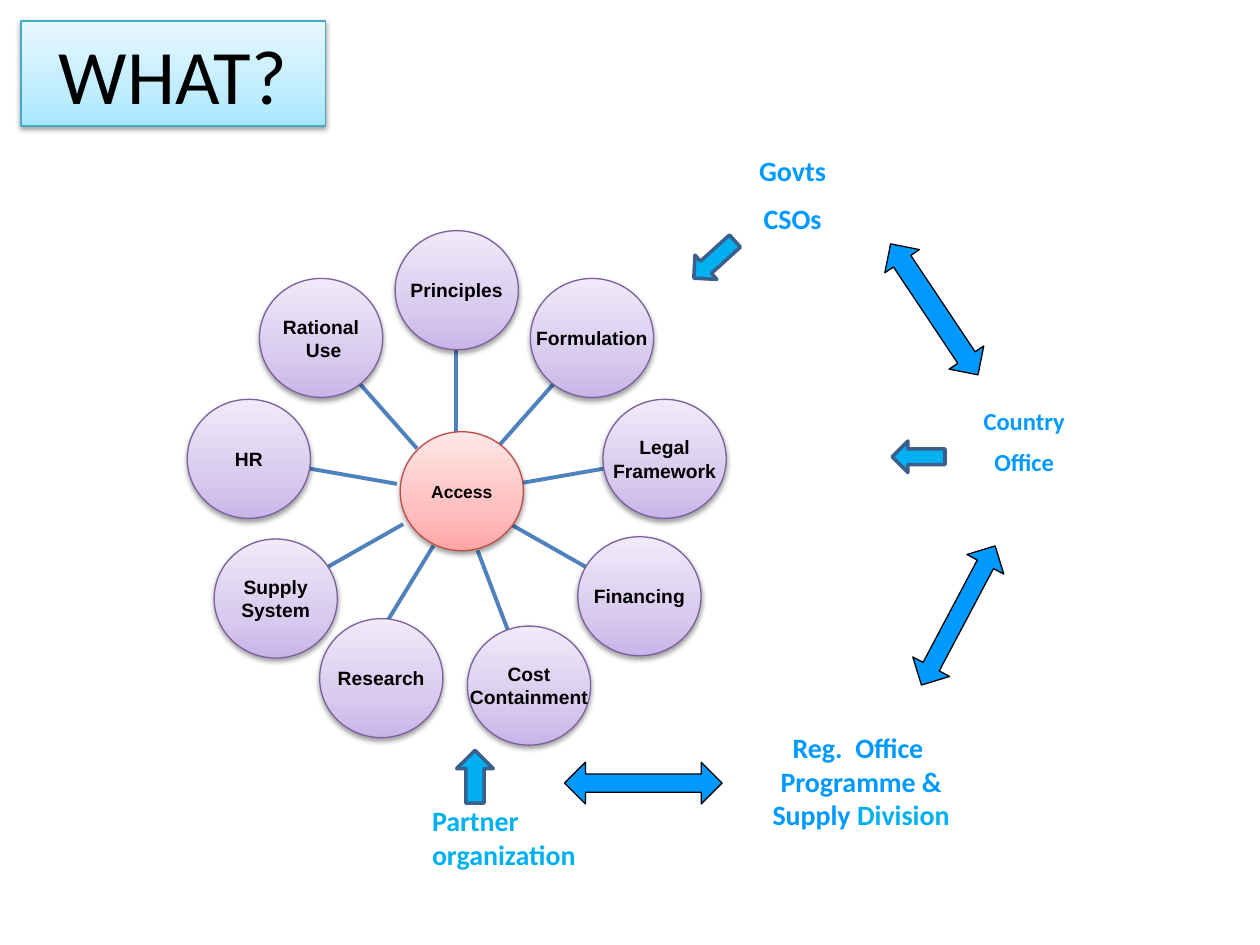
from copy import deepcopy

from lxml import etree
from pptx import Presentation
from pptx.dml.color import RGBColor
from pptx.enum.shapes import MSO_CONNECTOR, MSO_SHAPE
from pptx.enum.text import MSO_ANCHOR, MSO_AUTO_SIZE, PP_ALIGN
from pptx.oxml.ns import qn
from pptx.util import Pt

STRAIGHT = MSO_CONNECTOR.STRAIGHT
ELLIPSE, RECTANGLE = MSO_SHAPE.OVAL, MSO_SHAPE.RECTANGLE
LEFT_ARROW, DOUBLE_ARROW = MSO_SHAPE.LEFT_ARROW, MSO_SHAPE.UP_DOWN_ARROW
CENTER, LEFT = PP_ALIGN.CENTER, PP_ALIGN.LEFT
MIDDLE = MSO_ANCHOR.MIDDLE
FIT_SHAPE = MSO_AUTO_SIZE.SHAPE_TO_FIT_TEXT

COLORS = {
    "black": "000000", "blue": "0099FF", "sky": "00B0F0",
    "spoke": "4F81BD", "arrow edge": "3A5F8C",
}
# Gradient stops from bottom to top, then the outline
PURPLE = ("C9B5E8", "D8CBEE", "F0EAF9", "7D60A0")
RED = ("FFA6A5", "FFC0BF", "FFE7E7", "BF4C48")
AQUA = ("A7E6FF", "C1EDFF", "E7F8FF", "46AAC5")


def add_glossy(shapes, kind, box, palette, lines, font_name, size, bold):
    """Gradient shape with a soft shadow and centred black text."""
    shape = shapes.add_shape(kind, *map(Pt, box))
    shape.fill.gradient()
    shape.fill.gradient_angle = 90
    stop_list = shape._element.xpath(".//a:gsLst")[0]
    stop_list.append(deepcopy(stop_list[0]))
    for stop, position, color in zip(shape.fill.gradient_stops, (0, 0.35, 1), palette):
        stop.position = position
        stop.color.rgb = RGBColor.from_string(color)
    shape.line.color.rgb = RGBColor.from_string(palette[3])
    shape.line.width = Pt(0.75)

    shape.shadow.inherit = False
    effects = shape._element.spPr.find(qn("a:effectLst"))
    shadow = etree.SubElement(effects, qn("a:outerShdw"), blurRad=str(Pt(3.1)),
                              dist=str(Pt(1.6)), dir="5400000", rotWithShape="0")
    shadow_color = etree.SubElement(shadow, qn("a:srgbClr"), val=COLORS["black"])
    etree.SubElement(shadow_color, qn("a:alpha"), val="38000")

    frame = shape.text_frame
    frame.vertical_anchor = MIDDLE
    frame.text = "\n".join(lines)
    for paragraph in frame.paragraphs:
        paragraph.alignment = CENTER
        paragraph.font.name = font_name
        paragraph.font.size = Pt(size)
        paragraph.font.bold = bold
        paragraph.font.color.rgb = RGBColor.from_string(COLORS["black"])
    return shape


presentation = Presentation()
presentation.slide_width, presentation.slide_height = Pt(720), Pt(540)
slide = presentation.slides.add_slide(presentation.slide_layouts[6])

# Partner labels: box, size, alignment, paragraphs made of (text, color) runs
labels = [
    ((426.2, 414, 131.8, 65.5), 16, CENTER,
     [[("Reg.  Office  Programme & Supply ", "blue"), ("Division", "sky")]]),
    ((534.2, 228.2, 102.2, 49.7), 14, CENTER, [[("Country", "blue")], [("Office", "blue")]]),
    ((401.8, 84.2, 102.2, 55.4), 16, CENTER, [[("Govts", "blue")], [("CSOs", "blue")]]),
    ((239.8, 455.8, 108, 46.1), 16, LEFT, [[("Partner organization", "sky")]]),
]
for box, size, alignment, paragraphs in labels:
    frame = slide.shapes.add_textbox(*map(Pt, box)).text_frame
    frame.word_wrap = True
    frame.auto_size = FIT_SHAPE
    for index, runs in enumerate(paragraphs):
        paragraph = frame.add_paragraph() if index else frame.paragraphs[0]
        paragraph.alignment = alignment
        paragraph.font.name = "Calibri"
        paragraph.font.size = Pt(size)
        paragraph.font.bold = True
        if alignment == CENTER:
            paragraph.space_before = Pt(size / 2)
        for text, color in runs:
            run = paragraph.add_run()
            run.text = text
            run.font.color.rgb = RGBColor.from_string(COLORS[color])

# Wheel: label lines, circle left and top, spoke from hub to circle
CIRCLE = (70.4, 68)
topics = [
    (["Rational", " Use"], (148.3, 159.1), (238.3, 256.3, 205.9, 219.6)),
    (["HR"], (107, 228.2), (226.8, 276.5, 177.1, 267.8)),
    (["Supply", "System"], (122.4, 308), (230.4, 299.5, 187.2, 324)),
    (["Cost", "Containment"], (267.1, 357.8), (272.9, 314.6, 290.2, 360)),
    (["Financing"], (330.2, 306.7), (291.6, 299.5, 334.8, 324)),
    (["Legal", "Framework"], (344.6, 228.2), (295.2, 276.5, 344.9, 267.8)),
    (["Formulation"], (303.1, 159.1), (283.7, 256.3, 316.1, 219.6)),
    (["Principles"], (225.8, 131.8), (260.8, 248.4, 260.8, 200.2)),
    (["Research"], (182.7, 353.5), (247.7, 311.8, 221.8, 354.2)),
]
wheel = slide.shapes.add_group_shape().shapes
for _, _, ends in topics:
    spoke = wheel.add_connector(STRAIGHT, *map(Pt, ends))
    spoke.line.color.rgb = RGBColor.from_string(COLORS["spoke"])
    spoke.line.width = Pt(2.25)
    etree.SubElement(spoke._element.spPr, qn("a:effectLst"))

circles = [(lines, corner, PURPLE, 11) for lines, corner, _ in topics]
circles.append((["Access"], (228.7, 246.7), RED, 10))
for lines, corner, palette, size in circles:
    circle = add_glossy(wheel, ELLIPSE, corner + CIRCLE, palette, lines, "Arial", size, True)
    frame = circle.text_frame
    frame.word_wrap = False
    frame.margin_left = frame.margin_right = Pt(4.3)
    frame.margin_top = frame.margin_bottom = Pt(2.2)

# Arrows: kind, box, rotation, adjustments (head length, shaft width), style
double_style = ("blue", "black", 0.75)
single_style = ("sky", "arrow edge", 2)
arrows = [
    (DOUBLE_ARROW, (535.7, 306.7, 23.8, 90), 27.9, (0.95, 0.44), double_style),
    (DOUBLE_ARROW, (522, 131.8, 23.8, 90), 326.3, (0.95, 0.5), double_style),
    (DOUBLE_ARROW, (355.7, 402.5, 23.8, 90), 90, (0.95, 0.44), double_style),
    (LEFT_ARROW, (392.4, 139, 31.7, 18.7), 317.9, (), single_style),
    (LEFT_ARROW, (509.8, 252, 30.2, 18), 0, (), single_style),
    (LEFT_ARROW, (256.3, 433.4, 30.2, 20.9), 90, (), single_style),
]
for kind, box, rotation, adjustments, (fill, edge, width) in arrows:
    arrow = slide.shapes.add_shape(kind, *map(Pt, box))
    arrow.rotation = rotation
    for index, value in enumerate(adjustments):
        arrow.adjustments[index] = value
    arrow.shadow.inherit = False
    arrow.fill.solid()
    arrow.fill.fore_color.rgb = RGBColor.from_string(COLORS[fill])
    arrow.line.color.rgb = RGBColor.from_string(COLORS[edge])
    arrow.line.width = Pt(width)

# Title
add_glossy(slide.shapes, RECTANGLE, (12, 12, 174, 60), AQUA, ["WHAT?"], "Calibri", 44, False)

presentation.save("out.pptx")
